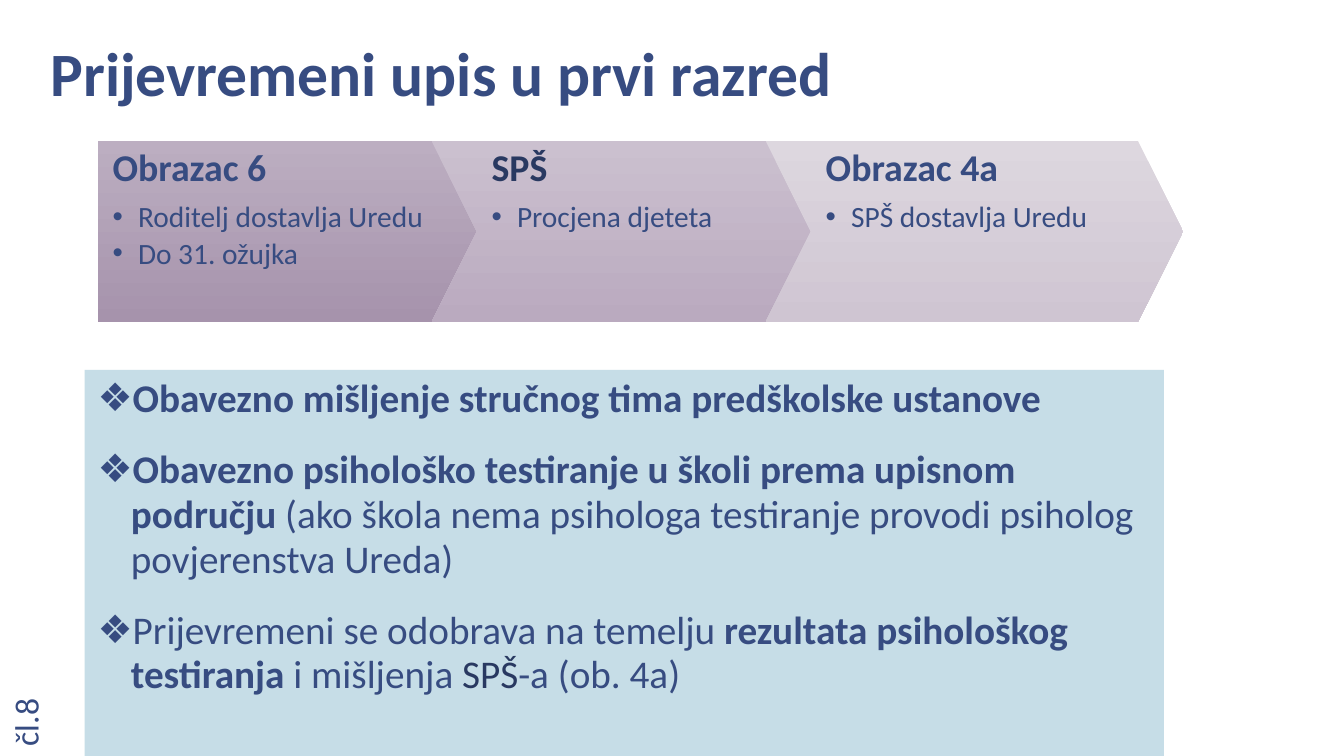
from dataclasses import dataclass

from lxml import etree
from pptx import Presentation
from pptx import util as u
from pptx.dml.color import RGBColor
from pptx.enum import shapes, text
from pptx.oxml.ns import qn


@dataclass(frozen=True)
class Theme:
    font: str = "Calibri"
    ink: str = "374C81"
    dark: str = "293961"
    panel: str = "C6DDE7"
    title: int = 44
    body: int = 28
    step: int = 27
    detail: int = 21
    note: int = 24


THEME = Theme()
STEP_LEFT, STEP_TOP, STEP_PITCH = 2.46, 3.56, 8.42
STEP_W, STEP_H = 10.52, 4.55

STEPS = [
    ("Obrazac 6", THEME.ink, ["Roditelj dostavlja Uredu", "Do 31. ožujka"],
     ("BCAEC1", "A693AC")),
    ("SPŠ", THEME.dark, ["Procjena djeteta"], ("CBC0CF", "BAAABF")),
    ("Obrazac 4a", THEME.ink, ["SPŠ dostavlja Uredu"], ("DDD7DF", "CFC5D2")),
]

# Each rule is a list of runs: text, bold, colour
RULES = [
    [("Obavezno mišljenje stručnog tima predškolske ustanove", True, THEME.ink)],
    [("Obavezno psihološko testiranje u školi prema upisnom području ", True, THEME.ink),
     ("(ako škola nema psihologa testiranje provodi psiholog povjerenstva Ureda)",
      False, THEME.ink)],
    [("Prijevremeni se odobrava na temelju ", False, THEME.ink),
     ("rezultata psihološkog testiranja", True, THEME.ink),
     (" i mišljenja ", False, THEME.ink),
     ("SPŠ", False, THEME.dark),
     ("-a (ob. 4a)", False, THEME.ink)],
]


def place(s, left, top, width, height):
    s.left, s.top, s.width, s.height = map(u.Cm, (left, top, width, height))


def set_frame(tf, left=0.33, right=0.33, anchor=text.MSO_ANCHOR.TOP):
    tf.word_wrap = True
    tf.auto_size = text.MSO_AUTO_SIZE.NONE
    tf.vertical_anchor = anchor
    tf.margin_left, tf.margin_right = u.Cm(left), u.Cm(right)
    tf.margin_top = tf.margin_bottom = u.Cm(0.18)


def add_run(p, words, size, color=THEME.ink, bold=False):
    r = p.add_run()
    r.text = words
    r.font.name, r.font.size, r.font.bold = THEME.font, u.Pt(size), bold
    r.font.color.rgb = RGBColor.from_string(color)


def add_text(tf, runs, size, first=False, line=1.0, before=0, after=0,
             bullet=None, indent=0):
    """Write one paragraph made of (text, bold, colour) runs."""
    p = tf.paragraphs[0] if first else tf.add_paragraph()
    p.alignment = text.PP_ALIGN.LEFT
    p.line_spacing = line
    p.space_before, p.space_after = u.Pt(0 if first else before), u.Pt(after)
    if bullet:
        pPr = p._p.get_or_add_pPr()
        pPr.set("marL", str(u.Cm(indent)))
        pPr.set("indent", str(-u.Cm(indent)))
        etree.SubElement(pPr, qn("a:buFont"), typeface="Arial")
        etree.SubElement(pPr, qn("a:buChar"), char=bullet)
    for words, bold, color in runs:
        add_run(p, words, size, color, bold)


def add_title(s, words):
    place(s, 0.94, 0.2, 32.92, 2.72)
    set_frame(s.text_frame, anchor=text.MSO_ANCHOR.BOTTOM)
    add_text(s.text_frame, [(words, True, THEME.ink)], THEME.title,
             first=True, line=0.85)


def add_rules(s, rules):
    place(s, 2.13, 9.32, 27.2, 9.73)
    s.fill.solid()
    s.fill.fore_color.rgb = RGBColor.from_string(THEME.panel)
    set_frame(s.text_frame)
    for i, runs in enumerate(rules):
        add_text(s.text_frame, runs, THEME.body, first=i == 0, line=0.95,
                 before=18.7, bullet="❖", indent=0.84)


def add_arrow(group, kind, left, colors):
    s = group.shapes.add_shape(kind, u.Cm(left), u.Cm(STEP_TOP),
                               u.Cm(STEP_W), u.Cm(STEP_H))
    s.adjustments[0] = 0.25
    s.shadow.inherit = False
    s.line.fill.background()
    s.fill.gradient()
    s.fill.gradient_angle = 270
    for stop, color in zip(s.fill.gradient_stops, colors):
        stop.color.rgb = RGBColor.from_string(color)


def add_step(group, i, heading, color, details, colors):
    left = STEP_LEFT + i * STEP_PITCH
    if i == 0:
        kind, text_left, width, right = shapes.MSO_SHAPE.PENTAGON, left, 9.96, 1.47
    else:
        kind, text_left, width, right = shapes.MSO_SHAPE.CHEVRON, left + 1.13, 8.26, 0.38
    add_arrow(group, kind, left, colors)
    tf = group.shapes.add_textbox(u.Cm(text_left), u.Cm(STEP_TOP),
                                  u.Cm(width), u.Cm(STEP_H)).text_frame
    set_frame(tf, left=0.38, right=right)
    add_text(tf, [(heading, True, color)], THEME.step, first=True, line=0.9, after=9.45)
    for detail in details:
        add_text(tf, [(detail, False, THEME.ink)], THEME.detail, line=0.9,
                 after=3.15, bullet="•", indent=0.64)


def add_article_note(slide, words):
    s = slide.shapes.add_textbox(u.Cm(-0.86), u.Cm(16.92), u.Cm(3), u.Cm(1.27))
    s.rotation = 270
    s.text_frame.word_wrap = True
    add_text(s.text_frame, [(words, False, THEME.ink)], THEME.note, first=True)


def main():
    prs = Presentation()
    prs.slide_width, prs.slide_height = u.Cm(33.87), u.Cm(19.05)
    slide = prs.slides.add_slide(prs.slide_layouts[1])
    add_title(slide.shapes.title, "Prijevremeni upis u prvi razred")
    add_rules(slide.placeholders[1], RULES)
    group = slide.shapes.add_group_shape()
    for i, step in enumerate(STEPS):
        add_step(group, i, *step)
    add_article_note(slide, "čl.8")
    prs.save("out.pptx")


if __name__ == "__main__":
    main()
